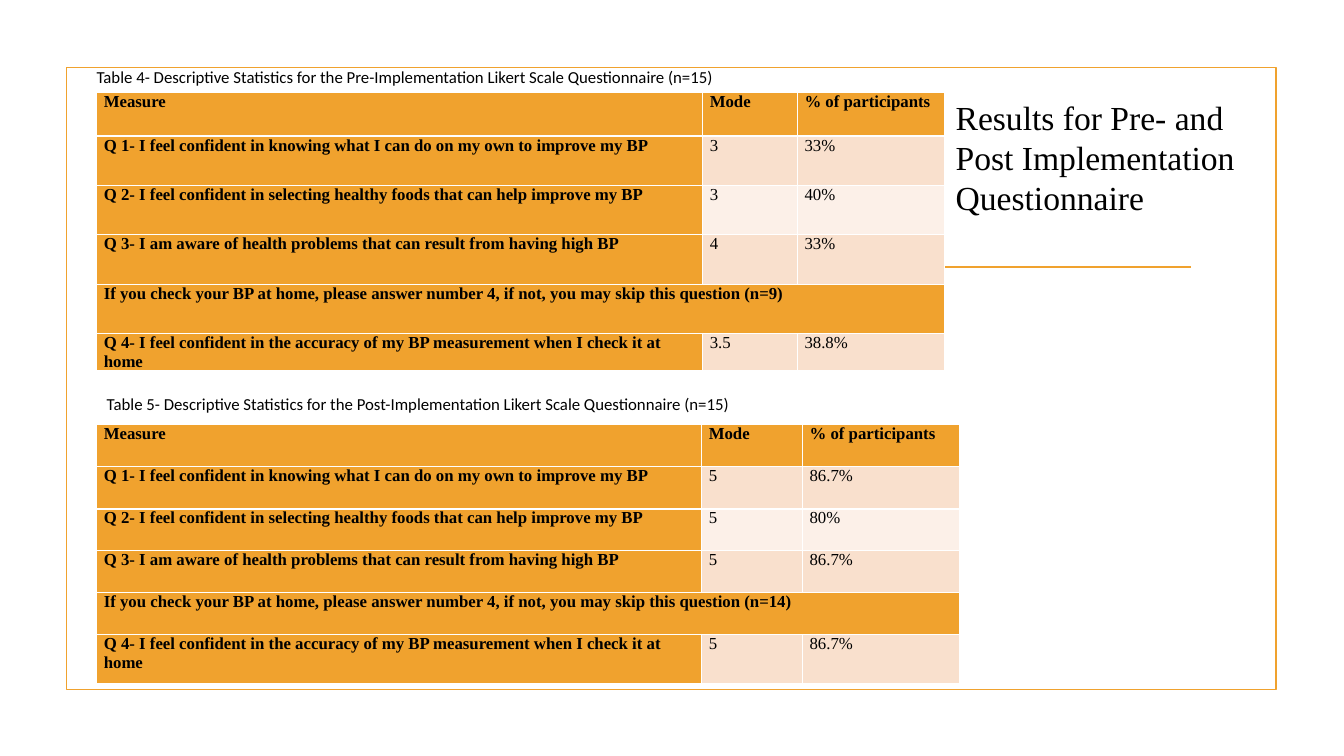
from dataclasses import dataclass

from pptx import Presentation
from pptx.dml.color import RGBColor
from pptx.enum import shapes, text
from pptx.oxml import xmlchemy
from pptx.util import Inches, Pt


@dataclass(frozen=True)
class Theme:
    accent: RGBColor = RGBColor.from_string("F0A22E")
    band_dark: RGBColor = RGBColor.from_string("F9E0CD")
    band_light: RGBColor = RGBColor.from_string("FCF0E8")
    ink: RGBColor = RGBColor.from_string("000000")
    serif: str = "Times New Roman"
    sans: str = "Calibri"
    title_size: int = 24
    body_size: int = 12
    line_width: float = 1.25


THEME = Theme()
HEADINGS = ("Measure", "Mode", "% of participants")
QUESTIONS = (
    "Q 1- I feel confident in knowing what I can do on my own to improve my BP",
    "Q 2- I feel confident in selecting healthy foods that can help improve my BP",
    "Q 3- I am aware of health problems that can result from having high BP",
    "Q 4- I feel confident in the accuracy of my BP measurement when I check it at home",
)
SKIP_NOTE = (
    "If you check your BP at home, please answer number 4, "
    "if not, you may skip this question (n={})"
)
CAPTION = "Table {}- Descriptive Statistics for the {}-Implementation Likert Scale Questionnaire (n=15)"


def style_text(paragraph, font_name, size, bold=False):
    for run in paragraph.runs:
        run.font.name = font_name
        run.font.size = Pt(size)
        run.font.bold = bold
        run.font.color.rgb = THEME.ink


def add_frame(slide, left, top, width, height):
    border = slide.shapes.add_shape(
        shapes.MSO_SHAPE.RECTANGLE, Inches(left), Inches(top), Inches(width), Inches(height)
    )
    border.shadow.inherit = False
    border.fill.background()
    border.line.color.rgb = THEME.accent
    border.line.width = Pt(THEME.line_width)

    rule_y = Inches(top + 1.98)
    title_rule = slide.shapes.add_connector(
        shapes.MSO_CONNECTOR.STRAIGHT,
        Inches(left + 0.87), rule_y, Inches(left + width - 0.85), rule_y,
    )
    title_rule.line.color.rgb = THEME.accent
    title_rule.line.width = Pt(THEME.line_width)
    properties = title_rule._element.spPr
    properties.append(xmlchemy.OxmlElement("a:effectLst"))


def add_label(slide, wording, left, top, width, height, font_name, size, indent=0):
    label = slide.shapes.add_textbox(Inches(left), Inches(top), Inches(width), Inches(height))
    frame = label.text_frame
    frame.word_wrap = True
    frame.auto_size = text.MSO_AUTO_SIZE.SHAPE_TO_FIT_TEXT
    frame.text = wording
    paragraph = frame.paragraphs[0]
    if indent:
        paragraph._p.get_or_add_pPr().set("indent", str(Inches(indent)))
    style_text(paragraph, font_name, size)


def add_results(slide, left, top, column_widths, row_heights, answers, home_count):
    answered = [(question, *answer) for question, answer in zip(QUESTIONS, answers)]
    rows = [HEADINGS, *answered[:3], (SKIP_NOTE.format(home_count), "", ""), answered[3]]
    results = slide.shapes.add_table(
        len(rows), len(HEADINGS), Inches(left), Inches(top),
        Inches(sum(column_widths)), Inches(sum(row_heights)),
    ).table
    for column, width in zip(results.columns, column_widths):
        column.width = Inches(width)
    for row, height in zip(results.rows, row_heights):
        row.height = Inches(height)

    skip_row = len(rows) - 2
    results.cell(skip_row, 0).merge(results.cell(skip_row, len(HEADINGS) - 1))
    for row_index, values in enumerate(rows):
        band = THEME.band_dark if row_index % 2 else THEME.band_light
        for column_index, value in enumerate(values):
            cell = results.cell(row_index, column_index)
            emphasised = row_index in (0, skip_row) or column_index == 0
            cell.fill.solid()
            cell.fill.fore_color.rgb = THEME.accent if emphasised else band
            cell.margin_left = cell.margin_right = Inches(0.07)
            cell.margin_top = cell.margin_bottom = 0
            if value:
                cell.text_frame.text = value
                style_text(cell.text_frame.paragraphs[0], THEME.serif, THEME.body_size, emphasised)


def build_results_slide(presentation):
    slide = presentation.slides.add_slide(presentation.slide_layouts[6])
    add_frame(slide, 0.66, 0.67, 12, 6.17)
    add_results(
        slide, 0.96, 0.92, (6.01, 0.94, 1.46), (0.43, 0.49, 0.49, 0.49, 0.49, 0.37),
        (("3", "33%"), ("3", "40%"), ("4", "33%"), ("3.5", "38.8%")), 9,
    )
    add_label(slide, CAPTION.format(4, "Pre"), 0.36, 0.61, 7.55, 0.3,
              THEME.sans, THEME.body_size, indent=0.5)
    add_label(slide, CAPTION.format(5, "Post"), 0.96, 3.86, 7.31, 0.3,
              THEME.sans, THEME.body_size)
    add_results(
        slide, 0.96, 4.21, (6, 1, 1.56), (0.42, 0.42, 0.41, 0.42, 0.42, 0.48),
        (("5", "86.7%"), ("5", "80%"), ("5", "86.7%"), ("5", "86.7%")), 14,
    )
    add_label(slide, "Results for Pre- and Post Implementation Questionnaire",
              9.38, 0.91, 3.47, 1.32, THEME.serif, THEME.title_size)


def main():
    presentation = Presentation()
    presentation.slide_width = Inches(13.33)
    presentation.slide_height = Inches(7.5)
    build_results_slide(presentation)
    presentation.save("out.pptx")


if __name__ == "__main__":
    main()
